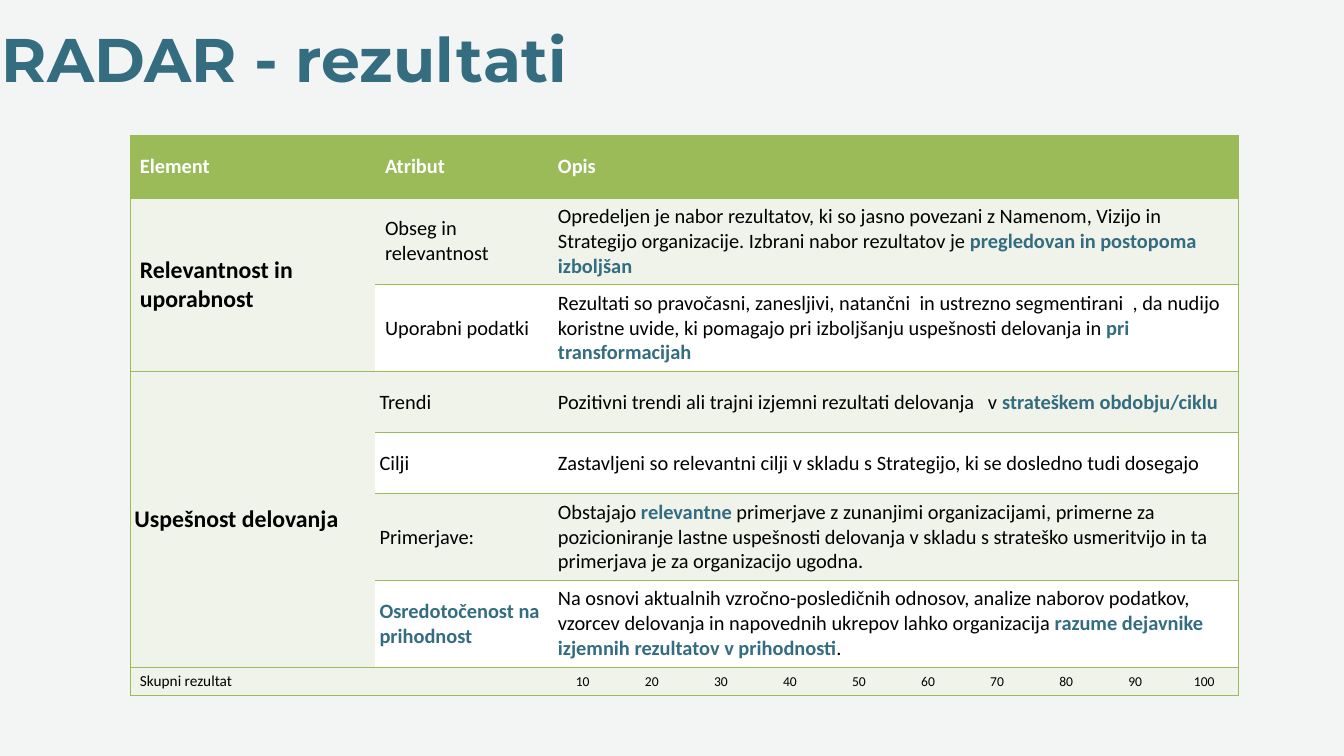
from lxml import etree
from pptx import Presentation, util as u
from pptx.dml.color import RGBColor
from pptx.enum import text
from pptx.oxml.ns import qn

BACKGROUND = RGBColor(0xF3, 0xF4, 0xF4)
TEAL = RGBColor(0x34, 0x6C, 0x80)
GREEN = RGBColor(0x9B, 0xBB, 0x59)
PALE = RGBColor(0xEF, 0xF3, 0xEA)
WHITE = RGBColor(0xFF, 0xFF, 0xFF)
BLACK = RGBColor(0, 0, 0)

WIDTH, HEIGHT = u.Inches(21.99), u.Inches(12.37)
COLUMNS = [4.01, 2.83] + [1.13] * 10
ROWS = [1.03, 1.42, 1.42, 1, 1, 1.42, 1.42, 0.46]
LAST_COLUMN, TOTAL_ROW = len(COLUMNS) - 1, len(ROWS) - 1
WIDE, TIGHT = (0.16, 0.08), (0.07, 0)

HEADINGS = ["Element", "Atribut", "Opis"]
# first row, last row, element, cell margins
ELEMENTS = [
    (1, 2, "Relevantnost in uporabnost", WIDE),
    (3, 6, "Uspešnost delovanja", TIGHT),
]
# Words between asterisks are emphasised.
ATTRIBUTES = [
    ("Obseg in relevantnost",
     "Opredeljen je nabor rezultatov, ki so jasno povezani z Namenom, Vizijo in Strategijo "
     "organizacije. Izbrani nabor rezultatov je *pregledovan in postopoma izboljšan*"),
    ("Uporabni podatki",
     "Rezultati so pravočasni, zanesljivi, natančni  in ustrezno segmentirani  , da nudijo "
     "koristne uvide, ki pomagajo pri izboljšanju uspešnosti delovanja in "
     "*pri transformacijah*"),
    ("Trendi",
     "Pozitivni trendi ali trajni izjemni rezultati delovanja   v "
     "*strateškem obdobju/ciklu  *"),
    ("Cilji",
     "Zastavljeni so relevantni cilji v skladu s Strategijo, ki se dosledno tudi dosegajo"),
    ("Primerjave:",
     "Obstajajo *relevantne* primerjave z zunanjimi organizacijami, primerne za "
     "pozicioniranje lastne uspešnosti delovanja v skladu s strateško usmeritvijo in ta "
     "primerjava je za organizacijo ugodna."),
    ("*Osredotočenost na prihodnost*",
     "Na osnovi aktualnih vzročno-posledičnih odnosov, analize naborov podatkov, vzorcev "
     "delovanja in napovednih ukrepov lahko organizacija "
     "*razume dejavnike izjemnih rezultatov v prihodnosti*."),
]


def add_title(slide, wording):
    title = slide.shapes.title
    title.left, title.top = 0, u.Inches(0.24)
    title.width, title.height = u.Inches(16.36), u.Inches(1.24)
    frame = title.text_frame
    frame.margin_left, frame.margin_top = u.Inches(0.03), u.Inches(0.1)
    frame.margin_right = frame.margin_bottom = 0
    frame.vertical_anchor = text.MSO_ANCHOR.TOP
    frame.auto_size = text.MSO_AUTO_SIZE.NONE
    frame.text = wording
    heading = frame.paragraphs[0]
    heading.alignment = text.PP_ALIGN.LEFT
    font = heading.font
    font.name, font.size, font.bold = "Montserrat", u.Pt(72.5), True
    font.color.rgb = TEAL


def set_borders(cell, sides):
    """Draw green lines on the given sides (of L, R, T, B) and none on the others."""
    properties = cell._tc.get_or_add_tcPr()
    for side in "LRTB":
        line = etree.SubElement(properties, qn(f"a:ln{side}"), w=str(u.Pt(1)))
        if side in sides:
            fill = etree.SubElement(line, qn("a:solidFill"))
            etree.SubElement(fill, qn("a:srgbClr"), val=str(GREEN))
        else:
            etree.SubElement(line, qn("a:noFill"))


def style_cells(table):
    for row in range(len(ROWS)):
        for column in range(len(COLUMNS)):
            cell = table.cell(row, column)
            reaches_right = column == LAST_COLUMN or (column == 2 and row < TOTAL_ROW)
            set_borders(cell, "TB" + "L" * (column == 0) + "R" * reaches_right)
            cell.fill.solid()
            if row == 0:
                cell.fill.fore_color.rgb = GREEN
            else:
                cell.fill.fore_color.rgb = PALE if row % 2 or column == 0 or row == TOTAL_ROW else WHITE
            set_margins(cell, WIDE)
    # The middle rows alternate again after the second element begins.


def set_margins(cell, margins):
    cell.margin_left = cell.margin_right = u.Inches(margins[0])
    cell.margin_top = cell.margin_bottom = u.Inches(margins[1])


def write(cell, wording, size=24, color=BLACK, bold=False, margins=WIDE,
          anchor=text.MSO_ANCHOR.MIDDLE, align=text.PP_ALIGN.LEFT):
    set_margins(cell, margins)
    cell.vertical_anchor = anchor
    paragraph = cell.text_frame.paragraphs[0]
    paragraph.alignment = align
    font = paragraph.font
    font.name, font.size, font.bold = "Calibri", u.Pt(size), bold
    font.color.rgb = color
    for index, part in enumerate(wording.split("*")):
        if part:
            run = paragraph.add_run()
            run.text = part
            if index % 2:
                run.font.bold = True
                run.font.color.rgb = TEAL


def add_radar_table(slide):
    table = slide.shapes.add_table(
        len(ROWS), len(COLUMNS), u.Inches(2.13), u.Inches(2.21),
        u.Inches(sum(COLUMNS)), u.Inches(sum(ROWS))).table
    for column, width in zip(table.columns, COLUMNS):
        column.width = u.Inches(width)
    for row, height in zip(table.rows, ROWS):
        row.height = u.Inches(height)
    style_cells(table)

    for row in range(TOTAL_ROW):
        table.cell(row, 2).merge(table.cell(row, LAST_COLUMN))
    for column, heading in enumerate(HEADINGS):
        write(table.cell(0, column), heading, color=WHITE, bold=True)
    for first, last, element, margins in ELEMENTS:
        table.cell(first, 0).merge(table.cell(last, 0))
        write(table.cell(first, 0), element, size=28, bold=True, margins=margins)
        for row in range(first, last + 1):
            attribute, description = ATTRIBUTES[row - 1]
            write(table.cell(row, 1), attribute, margins=margins)
            write(table.cell(row, 2), description)

    write(table.cell(TOTAL_ROW, 0), "Skupni rezultat", size=18, anchor=text.MSO_ANCHOR.TOP)
    for column in range(2, len(COLUMNS)):
        write(table.cell(TOTAL_ROW, column), str(10 * (column - 1)), size=16,
              align=text.PP_ALIGN.CENTER)


def main():
    deck = Presentation()
    deck.slide_width, deck.slide_height = WIDTH, HEIGHT
    slide = deck.slides.add_slide(deck.slide_layouts[5])
    slide.background.fill.solid()
    slide.background.fill.fore_color.rgb = BACKGROUND
    add_title(slide, "RADAR - rezultati")
    add_radar_table(slide)
    deck.save("out.pptx")


if __name__ == "__main__":
    main()
